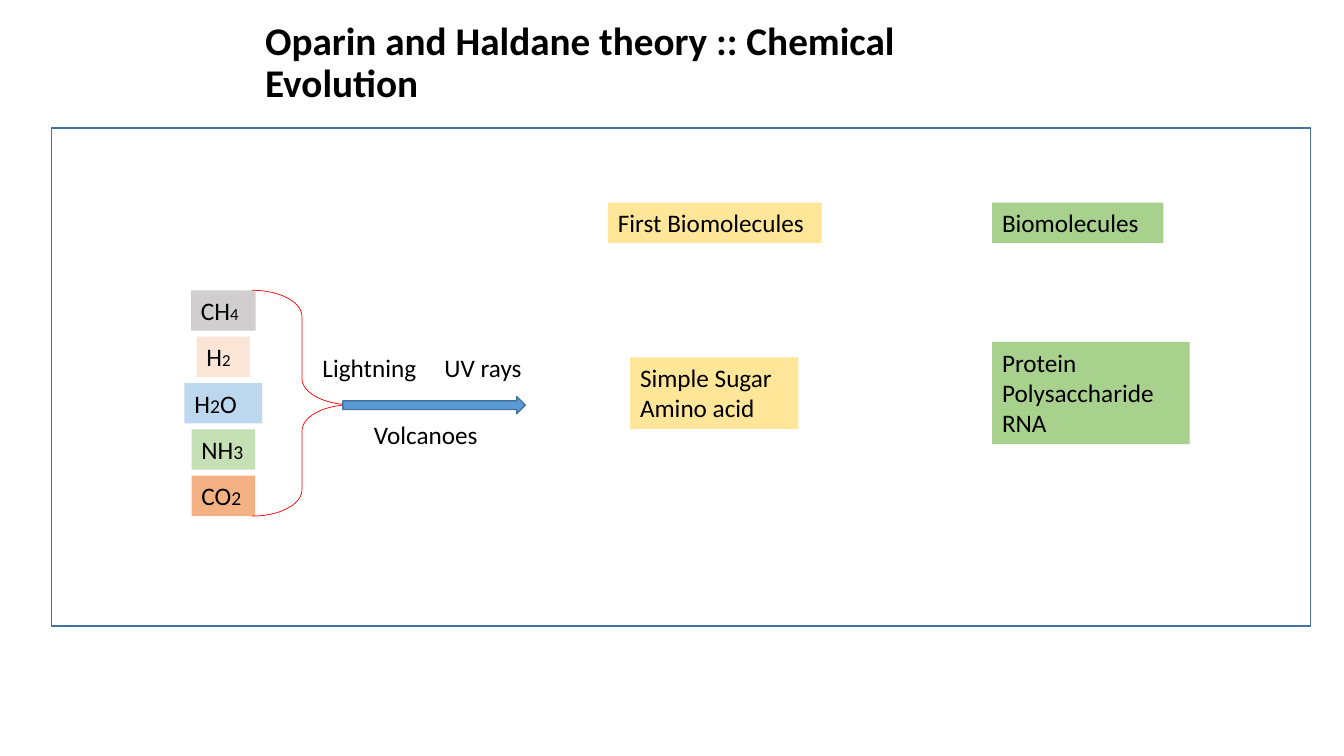
import pptx
import pptx.util
import pptx.dml.color
import pptx.enum.shapes
import pptx.enum.text
import lxml.etree

Inches = pptx.util.Inches
SHAPE = pptx.enum.shapes.MSO_SHAPE
ANCHOR = pptx.enum.text.MSO_ANCHOR
FONT = "Calibri"
ROW_H = 0.4
COLORS = {
    "black": "000000", "white": "FFFFFF", "edge": "43739E",
    "arrow": "5B9BD5", "brace": "FF0000", "yellow": "FFE699",
    "green": "A9D18E", "methane": "D0CECE", "hydrogen": "FBE5D6",
    "water": "BDD7EE", "ammonia": "C5E0B4", "carbon dioxide": "F4B183",
}
# Each gas: formula as (text, size) runs, box width
GASES = {
    "methane": ([("CH", 18), ("4", 12)], 0.64),
    "hydrogen": ([("H", 18), ("2", 12)], 0.53),
    "water": ([("H", 18), ("2", 14), ("O", 18)], 0.77),
    "ammonia": ([("NH", 18), ("3", 14)], 0.63),
    "carbon dioxide": ([("CO", 18), ("2", 14)], 0.63),
}


def rgb(name):
    return pptx.dml.color.RGBColor.from_string(COLORS[name])


def write(tf, lines, size=18, bold=False, anchor=ANCHOR.TOP, spacing=None):
    """Each line is a string or a list of (text, size) runs."""
    tf.word_wrap = True
    tf.vertical_anchor = anchor
    for i, line in enumerate(lines):
        p = tf.paragraphs[0] if i == 0 else tf.add_paragraph()
        p.alignment = pptx.enum.text.PP_ALIGN.LEFT
        p.line_spacing = spacing
        for text, pt in [(line, size)] if isinstance(line, str) else line:
            r = p.add_run()
            r.text = text
            r.font.name = FONT
            r.font.size = pptx.util.Pt(pt)
            r.font.bold = bold
            r.font.color.rgb = rgb("black")


def add_shape(s, kind, box, fill=None, line=None, width=1):
    sp = s.shapes.add_shape(kind, *map(Inches, box))
    sp.shadow.inherit = False
    if fill:
        sp.fill.solid()
        sp.fill.fore_color.rgb = rgb(fill)
    else:
        sp.fill.background()
    if line:
        sp.line.color.rgb = rgb(line)
        sp.line.width = pptx.util.Pt(width)
    else:
        sp.line.fill.background()
    return sp


def add_label(s, box, lines, fill=None):
    if fill:
        sp = add_shape(s, SHAPE.RECTANGLE, box, fill)
    else:
        sp = s.shapes.add_textbox(*map(Inches, box))
    write(sp.text_frame, lines)
    return sp


def add_title(s, box, text):
    title = s.shapes.title
    title.left, title.top, title.width, title.height = map(Inches, box)
    write(title.text_frame, [text], size=28, bold=True,
          anchor=ANCHOR.MIDDLE, spacing=0.9)


def add_gases(s, x, y, w, h):
    """Stack the gases around one centre line, closed by a brace."""
    column = 0.77
    pitch = (h - ROW_H) / (len(GASES) - 1)
    for i, (gas, (formula, width)) in enumerate(GASES.items()):
        left = x + (column - width) / 2
        add_label(s, (left, y + i * pitch, width, ROW_H), [formula], gas)
    brace_x = 0.67
    brace = add_shape(s, SHAPE.RIGHT_BRACE, (x + brace_x, y, w - brace_x, h),
                      line="brace", width=0.5)
    brace.adjustments[0], brace.adjustments[1] = 0.262, 0.507


def add_energy(s, x, y, w, h):
    """Arrow across the middle, energy sources above and below it."""
    arrow_h = 0.17
    add_shape(s, SHAPE.RIGHT_ARROW,
              (x + 0.3, y + (h - arrow_h) / 2 + 0.04, 1.81, arrow_h),
              "arrow", "edge")
    above = add_label(s, (x, y, w, ROW_H), ["Lightning\tUV rays"])
    pPr = above.text_frame.paragraphs[0]._p.get_or_add_pPr()
    tabs = lxml.etree.SubElement(pPr, pptx.oxml.ns.qn("a:tabLst"))
    lxml.etree.SubElement(tabs, pptx.oxml.ns.qn("a:tab"),
                          pos=str(Inches(1.21)), algn="l")
    add_label(s, (x + 0.51, y + h - ROW_H, 1.27, ROW_H), ["Volcanoes"])


def add_products(s, x, y, w, h, heading, items, item_w, indent, fill):
    """Heading at the top, list of products centred on the bottom edge."""
    add_label(s, (x, y, w, ROW_H), [heading], fill)
    item_h = 0.1 + 0.305 * len(items)
    add_label(s, (x + indent, y + h - item_h / 2, item_w, item_h), items, fill)


def add_diagram(s, x, y, w, h):
    add_shape(s, SHAPE.RECTANGLE, (x, y, w, h), "white", "edge")
    add_gases(s, x + 1.32, y + 1.61, 1.66, 2.24)
    add_energy(s, x + 2.59, y + 2.18, 2.41, 1.06)
    add_products(s, x + 5.52, y + 0.74, 2.12, 1.89, "First Biomolecules",
                 ["Simple Sugar", "Amino acid"], 1.67, 0.22, "yellow")
    add_products(s, x + 9.33, y + 0.74, 1.7, 1.89, "Biomolecules",
                 ["Protein", "Polysaccharide", "RNA"], 1.96, 0, "green")


def main():
    prs = pptx.Presentation()
    prs.slide_width, prs.slide_height = Inches(13.33), Inches(7.5)
    s = prs.slides.add_slide(prs.slide_layouts[5])
    add_title(s, (2.53, 0.35, 7.92, 0.57),
              "Oparin and Haldane theory :: Chemical Evolution")
    add_diagram(s, 0.51, 1.27, 12.49, 4.94)
    prs.save("out.pptx")


if __name__ == "__main__":
    main()
